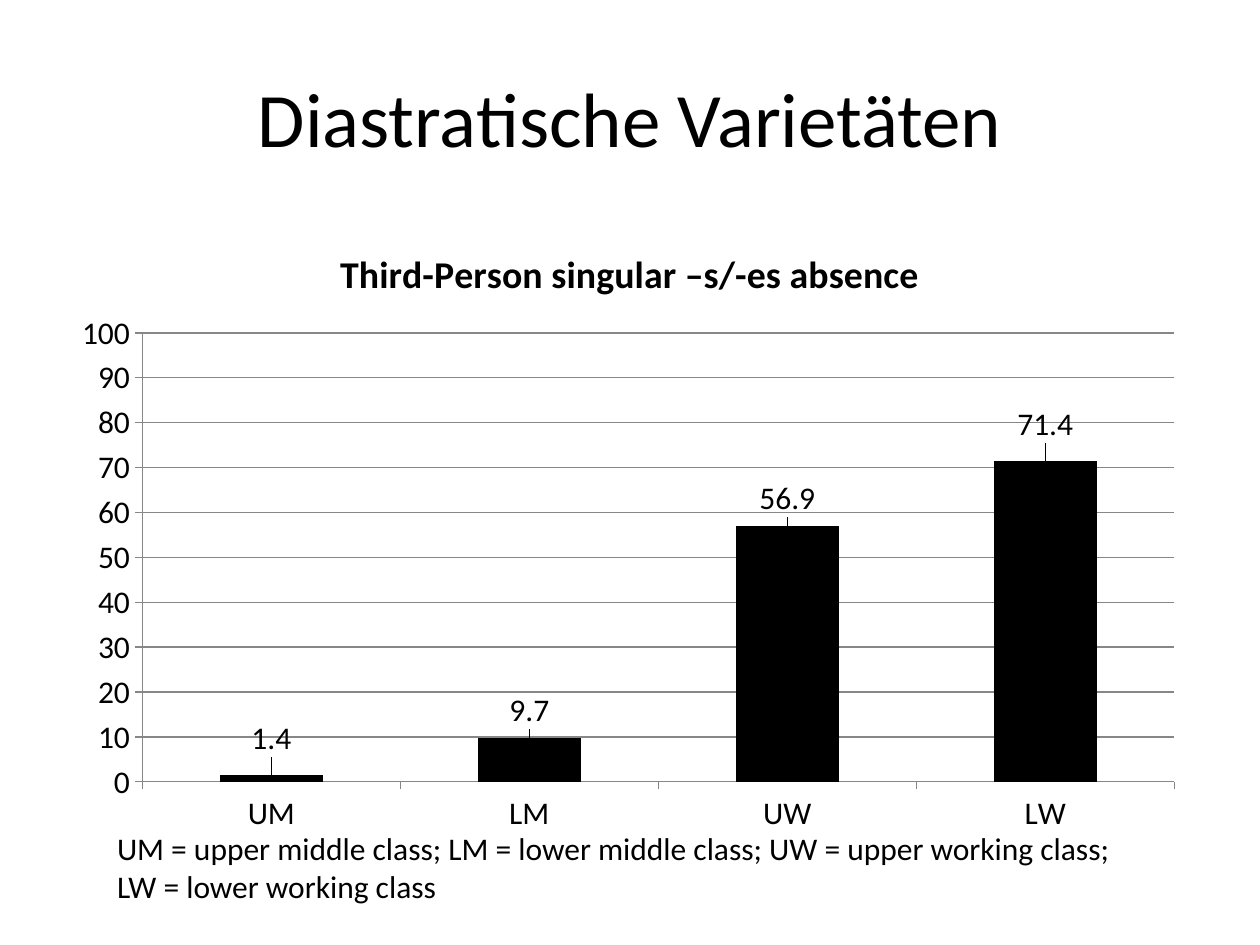
from lxml.etree import SubElement
from pptx import Presentation
from pptx.chart.data import CategoryChartData
from pptx.dml.color import RGBColor
from pptx.enum.chart import XL_CHART_TYPE as ChartType
from pptx.enum.chart import XL_LABEL_POSITION as LabelPosition
from pptx.enum.chart import XL_TICK_MARK as TickMark
from pptx.enum.text import MSO_ANCHOR as Anchor
from pptx.enum.text import MSO_AUTO_SIZE as AutoSize
from pptx.enum.text import PP_ALIGN as Align
from pptx.oxml import parse_xml
from pptx.oxml.ns import nsdecls, qn
from pptx.util import Cm, Pt

BLACK = RGBColor(0x00, 0x00, 0x00)
GRID_GRAY = RGBColor(0x87, 0x87, 0x87)

CLASS_VALUES = {"UM": 1.4, "LM": 9.7, "UW": 56.9, "LW": 71.4}
AXIS_MAXIMUM = 100
# Inner plot area as fractions of the chart frame
PLOT_AREA = {"x": 0.07, "y": 0.18, "w": 0.91, "h": 0.72}
# Space between bar top and label centre, as a fraction of the chart height
LABEL_GAPS = [0.06, 0.045, 0.045, 0.06]


def set_values(target, **values):
    for name, value in values.items():
        setattr(target, name, value)


def make_layout(**fractions):
    """Manual chart layout from fractions of the chart frame."""
    layout = parse_xml(f"<c:layout {nsdecls('c')}/>")
    manual = SubElement(layout, qn("c:manualLayout"))
    for name, value in fractions.items():
        SubElement(manual, qn(f"c:{name}")).set("val", str(value))
    return layout


class SlideBuilder:
    font_name = "Calibri"
    color = BLACK

    def __init__(self, slide):
        self.slide = slide

    def style_font(self, font, size, bold=False):
        set_values(font, name=self.font_name, size=Pt(size), bold=bold)
        font.color.rgb = self.color

    def add_text(self, box, lines, size, align=Align.LEFT, **frame_format):
        shape = self.slide.shapes.add_textbox(*map(Cm, box))
        frame = shape.text_frame
        set_values(frame, word_wrap=True, **frame_format)
        frame.text = "\n".join(lines)
        for paragraph in frame.paragraphs:
            paragraph.alignment = align
            self.style_font(paragraph.runs[0].font, size)

    def add_column_chart(self, box, title, values):
        data = CategoryChartData()
        data.categories = list(values)
        data.add_series("Series 1", list(values.values()))
        chart = self.slide.shapes.add_chart(
            ChartType.COLUMN_STACKED, *map(Cm, box), data).chart
        set_values(chart, has_legend=False, has_title=True)
        self.style_font(chart.font, 18)

        # Chart title
        frame = chart.chart_title.text_frame
        frame.text = title
        self.style_font(frame.paragraphs[0].runs[0].font, 21.6, bold=True)

        # Plot area and axes
        plot_area = chart.plots[0]._element.getparent()
        for old_layout in plot_area.findall(qn("c:layout")):
            plot_area.remove(old_layout)
        plot_area.insert(0, make_layout(
            layoutTarget="inner", xMode="edge", yMode="edge", **PLOT_AREA))
        set_values(chart.value_axis, minimum_scale=0, major_unit=10,
                   maximum_scale=AXIS_MAXIMUM, has_major_gridlines=True)
        for axis in (chart.category_axis, chart.value_axis):
            set_values(axis, major_tick_mark=TickMark.OUTSIDE,
                       minor_tick_mark=TickMark.NONE)
            self.style_line(axis.format.line)
        self.style_line(chart.value_axis.major_gridlines.format.line)

        # Columns and their value labels
        plot = chart.plots[0]
        set_values(plot, gap_width=150, overlap=100, vary_by_categories=False)
        series = plot.series[0]
        series.format.fill.solid()
        series.format.fill.fore_color.rgb = self.color
        series.data_labels.show_value = True
        for index, (value, gap) in enumerate(zip(values.values(), LABEL_GAPS)):
            self.raise_label(series, index, value, gap)

    def style_line(self, line):
        line.width = Pt(0.75)
        line.color.rgb = GRID_GRAY

    def raise_label(self, series, index, value, gap):
        """Move a centred label from the middle of its column to above it."""
        series.points[index].data_label.position = LabelPosition.CENTER
        label = series.data_labels._element.findall(qn("c:dLbl"))[index]
        half_column = value / AXIS_MAXIMUM * PLOT_AREA["h"] / 2
        label.insert(1, make_layout(x=0, y=round(-half_column - gap, 3)))


def main():
    presentation = Presentation()
    set_values(presentation, slide_width=Cm(25.4), slide_height=Cm(19.05))
    builder = SlideBuilder(
        presentation.slides.add_slide(presentation.slide_layouts[6]))

    # Heading
    builder.add_text((1.27, 0.76, 22.86, 3.18), ["Diastratische Varietäten"],
                     44, Align.CENTER, vertical_anchor=Anchor.MIDDLE)

    # Chart
    builder.add_column_chart((1.27, 4.45, 22.86, 12.57),
                             "Third-Person singular –s/-es absence",
                             CLASS_VALUES)

    # Key to the abbreviations
    builder.add_text(
        (2.11, 16.59, 21.67, 1.8),
        ["UM = upper middle class; LM = lower middle class; "
         "UW = upper working class;",
         "LW = lower working class"],
        18, auto_size=AutoSize.SHAPE_TO_FIT_TEXT)

    presentation.save("out.pptx")


if __name__ == "__main__":
    main()
